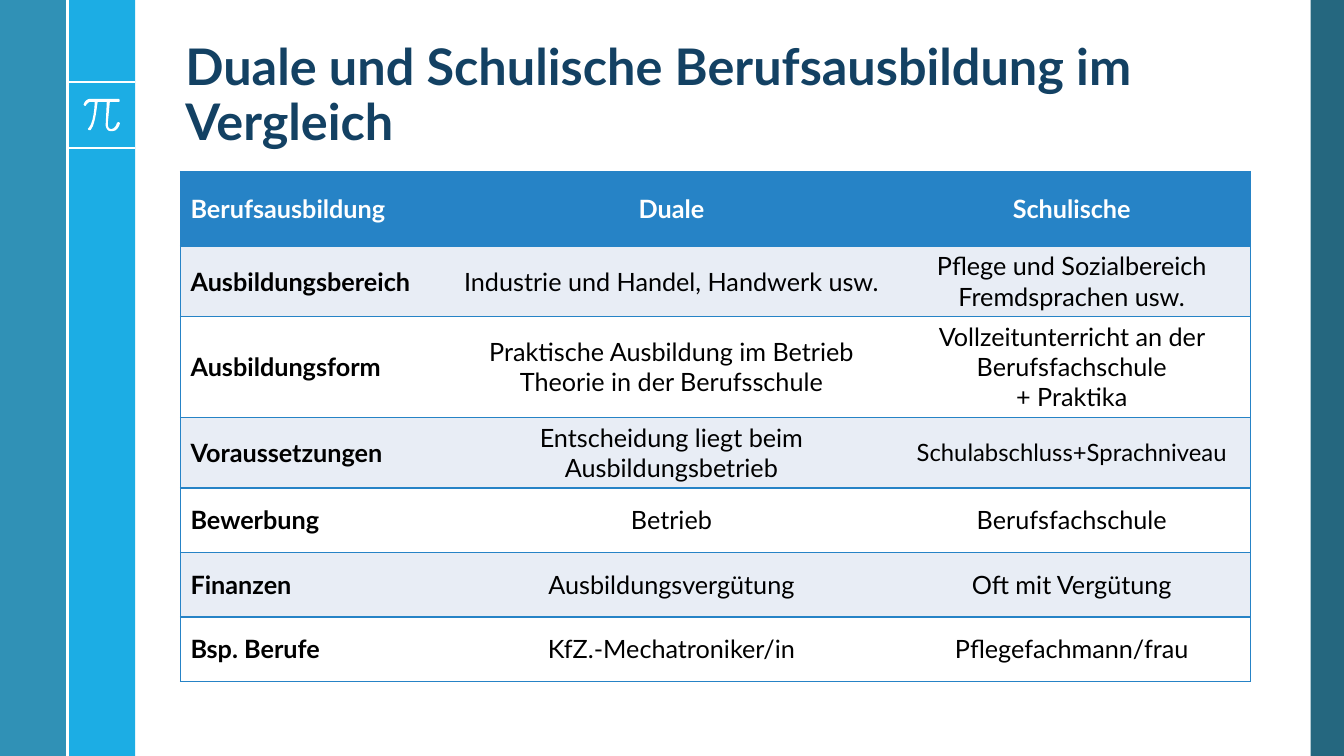
from dataclasses import dataclass

from lxml.etree import SubElement
from pptx import Presentation
from pptx.dml.color import RGBColor
from pptx.enum.shapes import MSO_CONNECTOR, MSO_SHAPE
from pptx.enum.text import MSO_ANCHOR, PP_ALIGN
from pptx.oxml.ns import qn
from pptx.util import Inches, Pt


@dataclass(frozen=True)
class Theme:
    """Colours, font and type sizes of the slide."""
    font: str = "Lato"
    title: str = "134163"
    header: str = "2683C6"
    band: str = "E8EDF5"
    white: str = "FFFFFF"
    black: str = "000000"
    bright_bar: str = "1CADE4"
    left_bar: str = "1482AC"
    right_bar: str = "0E5772"
    title_size: float = 36
    table_size: float = 18
    tight_size: float = 17


THEME = Theme()
SLIDE_HEIGHT = 7.5
BAR_WIDTH = 0.67
COLUMN_WIDTHS = (2.67, 4.4, 3.54)
HEADER_HEIGHT, ROW_HEIGHT = 0.74, 0.64
COMPARISON = (
    ("Berufsausbildung", "Duale", "Schulische"),
    ("Ausbildungsbereich", "Industrie und Handel, Handwerk usw.",
     "Pflege und Sozialbereich\nFremdsprachen usw."),
    ("Ausbildungsform", "Praktische Ausbildung im Betrieb\nTheorie in der Berufsschule",
     "Vollzeitunterricht an der Berufsfachschule\n+ Praktika"),
    ("Voraussetzungen", "Entscheidung liegt beim Ausbildungsbetrieb",
     "Schulabschluss+Sprachniveau"),
    ("Bewerbung", "Betrieb", "Berufsfachschule"),
    ("Finanzen", "Ausbildungsvergütung", "Oft mit Vergütung"),
    ("Bsp. Berufe", "KfZ.-Mechatroniker/in", "Pflegefachmann/frau"),
)
PI_START = (1.18, 0.98)
PI_SEGMENTS = (
    ((0.9, 0.98),),
    ((0.85, 0.98), (0.83, 1.03), (0.83, 1.04)),
    ((0.84, 1.05),),
    ((0.85, 1.05),),
    ((0.85, 1.05), (0.87, 1.01), (0.9, 1.01)),
    ((0.94, 1.01),),
    ((0.94, 1.05), (0.93, 1.22), (0.88, 1.27)),
    ((0.87, 1.28), (0.87, 1.28), (0.88, 1.29)),
    ((0.9, 1.29),),
    ((0.95, 1.23), (0.96, 1.05), (0.97, 1.01)),
    ((1.06, 1.01),),
    ((1.05, 1.22),),
    ((1.05, 1.22), (1.04, 1.26), (1.07, 1.29)),
    ((1.08, 1.3), (1.09, 1.3), (1.1, 1.3)),
    ((1.12, 1.3),),
    ((1.17, 1.3), (1.19, 1.23), (1.19, 1.22)),
    ((1.18, 1.21), (1.17, 1.21), (1.16, 1.22)),
    ((1.16, 1.22), (1.15, 1.27), (1.11, 1.28)),
    ((1.1, 1.28), (1.09, 1.28), (1.08, 1.27)),
    ((1.07, 1.26), (1.07, 1.23), (1.07, 1.22)),
    ((1.09, 1.01),),
    ((1.18, 1.01),),
    ((1.19, 1.01), (1.19, 0.99), (1.18, 0.98)),
)


def write_text(frame, text, *, size, color, bold=False, align=PP_ALIGN.LEFT,
               anchor=MSO_ANCHOR.MIDDLE, spacing=None):
    """Write one paragraph per line of text in the given format."""
    frame.word_wrap = True
    frame.vertical_anchor = anchor
    for index, line in enumerate(text.split("\n")):
        paragraph = frame.add_paragraph() if index else frame.paragraphs[0]
        paragraph.alignment = align
        paragraph.line_spacing = spacing
        run = paragraph.add_run()
        run.text = line
        run.font.name = THEME.font
        run.font.size = Pt(size)
        run.font.bold = bold
        run.font.color.rgb = RGBColor.from_string(color)


def paint(shape, color, opacity=100):
    """Give a shape a plain fill without line or shadow."""
    shape.shadow.inherit = False
    shape.line.fill.background()
    shape.fill.solid()
    shape.fill.fore_color.rgb = RGBColor.from_string(color)
    if opacity < 100:
        tint = shape.fill._xPr.find(qn("a:solidFill"))[0]
        SubElement(tint, qn("a:alpha"), val=str(opacity * 1000))


def add_bar(slide, left, width, color, opacity=100):
    """Add a bar over the full height of the slide."""
    bar = slide.shapes.add_shape(MSO_SHAPE.RECTANGLE, Inches(left), 0,
                                 Inches(width), Inches(SLIDE_HEIGHT))
    paint(bar, color, opacity)


def add_rule(slide, start, end):
    """Add a thin white line between two points."""
    rule = slide.shapes.add_connector(MSO_CONNECTOR.STRAIGHT,
                                      *map(Inches, start + end))
    rule.line.color.rgb = RGBColor.from_string(THEME.white)
    rule.line.width = Pt(1.5)
    SubElement(rule._element.spPr, qn("a:effectLst"))


def trace(start, segments, steps=6):
    """Turn straight and cubic segments into outline points."""
    points = []
    for segment in segments:
        if len(segment) == 1:
            points.append(segment[0])
        else:
            controls = (start, *segment)
            for step in range(1, steps + 1):
                t = step / steps
                weights = ((1 - t) ** 3, 3 * t * (1 - t) ** 2, 3 * t * t * (1 - t), t ** 3)
                points.append(tuple(sum(w * c[axis] for w, c in zip(weights, controls))
                                    for axis in (0, 1)))
        start = segment[-1]
    return points


def add_pi(slide):
    """Draw the white pi sign in the side bar."""
    outline = slide.shapes.build_freeform(*map(Inches, PI_START))
    outline.add_line_segments([(Inches(x), Inches(y)) for x, y in trace(PI_START, PI_SEGMENTS)])
    paint(outline.convert_to_shape(), THEME.white)


def set_borders(cell, visible_sides):
    """Draw the named cell borders and hide the others."""
    properties = cell._tc.get_or_add_tcPr()
    for side in "LRTB":
        border = SubElement(properties, qn(f"a:ln{side}"), w=str(Pt(1)))
        if side in visible_sides:
            SubElement(SubElement(border, qn("a:solidFill")), qn("a:srgbClr"), val=THEME.header)
        else:
            SubElement(border, qn("a:noFill"))


def add_comparison(slide):
    """Add the table that compares both kinds of training."""
    last = len(COLUMN_WIDTHS) - 1
    height = HEADER_HEIGHT + ROW_HEIGHT * (len(COMPARISON) - 1)
    table = slide.shapes.add_table(
        len(COMPARISON), len(COLUMN_WIDTHS), Inches(1.79), Inches(1.7),
        Inches(sum(COLUMN_WIDTHS)), Inches(height)).table
    for column, width in zip(table.columns, COLUMN_WIDTHS):
        column.width = Inches(width)
    for row, texts in enumerate(COMPARISON):
        table.rows[row].height = Inches(ROW_HEIGHT if row else HEADER_HEIGHT)
        background = (THEME.band if row % 2 else THEME.white) if row else THEME.header
        for column, text in enumerate(texts):
            cell = table.cell(row, column)
            set_borders(cell, "TB" + {0: "L", last: "R"}.get(column, ""))
            cell.fill.solid()
            cell.fill.fore_color.rgb = RGBColor.from_string(background)
            cell.vertical_anchor = MSO_ANCHOR.MIDDLE
            tight = text == "Schulabschluss+Sprachniveau"
            write_text(cell.text_frame, text,
                       size=THEME.tight_size if tight else THEME.table_size,
                       color=THEME.black if row else THEME.white,
                       bold=row == 0 or column == 0,
                       align=PP_ALIGN.CENTER if column else PP_ALIGN.LEFT,
                       anchor=None)


def main():
    """Build the slide and save it."""
    presentation = Presentation()
    presentation.slide_width = Inches(13.33)
    presentation.slide_height = Inches(SLIDE_HEIGHT)
    slide = presentation.slides.add_slide(presentation.slide_layouts[6])
    add_bar(slide, 13, 0.33, THEME.right_bar, 90)
    add_bar(slide, BAR_WIDTH, BAR_WIDTH, THEME.bright_bar)
    add_bar(slide, 0, BAR_WIDTH, THEME.left_bar, 88)
    for y in (0.81, 1.47):
        add_rule(slide, (BAR_WIDTH, y), (2 * BAR_WIDTH, y))
    add_pi(slide)
    add_rule(slide, (BAR_WIDTH, 0), (BAR_WIDTH, SLIDE_HEIGHT))
    title = slide.shapes.add_textbox(Inches(1.74), Inches(0.19), Inches(10.7), Inches(1.36))
    write_text(title.text_frame, "Duale und Schulische Berufsausbildung im Vergleich",
               size=THEME.title_size, color=THEME.title, bold=True,
               anchor=MSO_ANCHOR.BOTTOM, spacing=0.9)
    add_comparison(slide)
    presentation.save("out.pptx")


if __name__ == "__main__":
    main()
